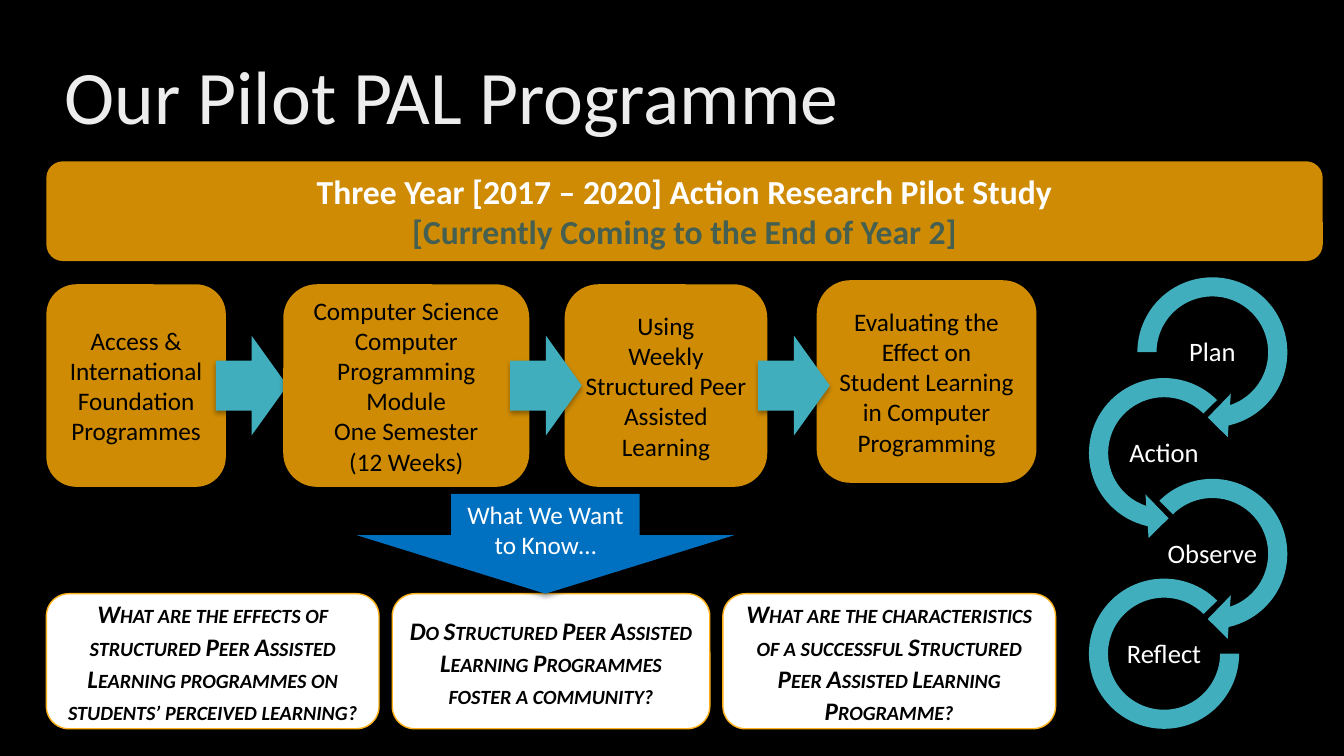
"""Build the slide about the pilot peer assisted learning programme."""
from dataclasses import dataclass

from lxml import etree
from pptx import Presentation
from pptx.dml.color import RGBColor
from pptx.enum import shapes, text
from pptx.oxml import ns
from pptx.util import Inches, Pt


@dataclass(frozen=True)
class Theme:
    font: str = "Calibri"
    background: str = "000000"
    title: str = "EDEDED"
    gold: str = "CF8B03"
    gold_line: str = "FCB11C"
    teal: str = "41AEBD"
    blue: str = "0070C0"
    green: str = "455F51"
    white: str = "FFFFFF"
    black: str = "000000"
    title_size: int = 54
    banner_size: int = 24
    cycle_size: int = 19
    body_size: int = 18


theme = Theme()
kind = shapes.MSO_SHAPE


def add_shape(shape_kind, box, fill, shadow=True, adjustments=()):
    s = slide.shapes.add_shape(shape_kind, *map(Inches, box))
    s.shadow.inherit = False
    s.fill.solid()
    s.fill.fore_color.rgb = RGBColor.from_string(fill)
    s.line.fill.background()
    for i, value in enumerate(adjustments):
        s.adjustments[i] = value
    if shadow:
        effects = s._element.spPr.find(ns.qn("a:effectLst"))
        outer = etree.SubElement(effects, ns.qn("a:outerShdw"), blurRad=str(Pt(3.5)),
                                 dist=str(Pt(2.2)), dir="5400000", rotWithShape="0")
        color = etree.SubElement(outer, ns.qn("a:srgbClr"), val=theme.black)
        etree.SubElement(color, ns.qn("a:alpha"), val="32000")
    return s


def write(s, lines, size, colors, align=text.PP_ALIGN.CENTER, spacing=1.0, bold=False):
    tf = s.text_frame
    tf.word_wrap = True
    tf.vertical_anchor = text.MSO_ANCHOR.MIDDLE
    for i, line in enumerate(lines):
        p = tf.paragraphs[0] if i == 0 else tf.add_paragraph()
        p.alignment = align
        p.line_spacing = spacing
        r = p.add_run()
        r.text = line
        r.font.name = theme.font
        r.font.size = Pt(size)
        r.font.bold = bold
        r.font.color.rgb = RGBColor.from_string(colors[i % len(colors)])
    return tf


prs = Presentation()
prs.slide_width, prs.slide_height = Inches(13.33), Inches(7.5)
slide = prs.slides.add_slide(prs.slide_layouts[6])
slide.background.fill.solid()
slide.background.fill.fore_color.rgb = RGBColor.from_string(theme.background)

title = slide.shapes.add_textbox(Inches(0.54), Inches(0.27), Inches(11.5), Inches(1.45))
write(title, ["Our Pilot PAL Programme"], theme.title_size, [theme.title],
      align=text.PP_ALIGN.LEFT, spacing=0.9)

banner = add_shape(kind.ROUNDED_RECTANGLE, (0.46, 1.6, 12.66, 0.99), theme.gold)
write(banner, ["Three Year [2017 – 2020] Action Research Pilot Study",
               "[Currently Coming to the End of Year 2]"],
      theme.banner_size, [theme.white, theme.green], bold=True)

steps = [
    (0.46, 2.82, 1.78, ["Access & International", "Foundation Programmes"]),
    (2.81, 2.82, 2.44, ["Computer Science Computer Programming", "Module",
                        "One Semester", "(12 Weeks)"]),
    (5.6, 2.82, 2.01, ["Using", "Weekly", "Structured Peer Assisted Learning"]),
    (8.1, 2.78, 2.18, ["Evaluating the", "Effect on",
                       "Student Learning in Computer Programming"]),
]
step_boxes = []
for left, top, width, lines in steps:
    s = add_shape(kind.ROUNDED_RECTANGLE, (left, top, width, 2.01), theme.gold)
    write(s, lines, theme.body_size, [theme.black])
    step_boxes.append(s)

for left in (2, 4.92, 7.38):
    arrow = add_shape(kind.DOWN_ARROW, (left, 3.47, 0.99, 0.71), theme.teal)
    arrow.rotation = 270
    if left == 2:
        step_boxes[1]._element.addprevious(arrow._element)

questions = [
    (0.46, 3.3, "What are the effects of structured Peer Assisted Learning "
                "programmes on students’ perceived learning?"),
    (3.89, 3.15, "Do Structured Peer Assisted Learning Programmes foster a community?"),
    (7.17, 3.3, "What are the characteristics of a successful Structured "
                "Peer Assisted Learning Programme?"),
]
for left, width, question in questions:
    s = add_shape(kind.ROUNDED_RECTANGLE, (left, 5.89, width, 1.34), theme.white, shadow=False)
    s.line.color.rgb = RGBColor.from_string(theme.gold_line)
    s.line.width = Pt(1)
    tf = write(s, [question], theme.body_size, [theme.black], spacing=1.07, bold=True)
    p = tf.paragraphs[0]
    p.space_after = Pt(8)
    r = p.runs[0]
    r.font.italic = True
    r.font._element.set("cap", "small")

want = add_shape(kind.DOWN_ARROW, (3.54, 4.9, 3.74, 0.99), theme.blue, adjustments=(0.5, 0.586))
write(want, ["What We Want to Know…"], theme.body_size, [theme.white])

cycle = [
    ("Plan", kind.CIRCULAR_ARROW, (11.16, 2.63, 1.73, 1.73), (0.11, 11.423, 45, 108, 0.125)),
    ("Action", kind.LEFT_CIRCULAR_ARROW, (10.68, 3.63, 1.73, 1.73),
     (0.11, 11.423, 63, 189, 0.125)),
    ("Observe", kind.CIRCULAR_ARROW, (11.16, 4.63, 1.73, 1.73), (0.11, 11.423, 45, 135, 0.125)),
    ("Reflect", kind.BLOCK_ARC, (10.8, 5.74, 1.49, 1.49), (0, 189, 0.127)),
]
for i, (stage, ring, box, adjustments) in enumerate(cycle):
    add_shape(ring, box, theme.teal, shadow=False, adjustments=adjustments)
    label = slide.shapes.add_textbox(Inches(11.06 if i % 2 else 11.54), Inches(3.26 + i),
                                     Inches(0.97), Inches(0.48))
    tf = write(label, [stage], theme.cycle_size, [theme.white], spacing=0.9)
    tf.margin_left = tf.margin_right = tf.margin_top = tf.margin_bottom = Inches(0.01)

prs.save("out.pptx")
